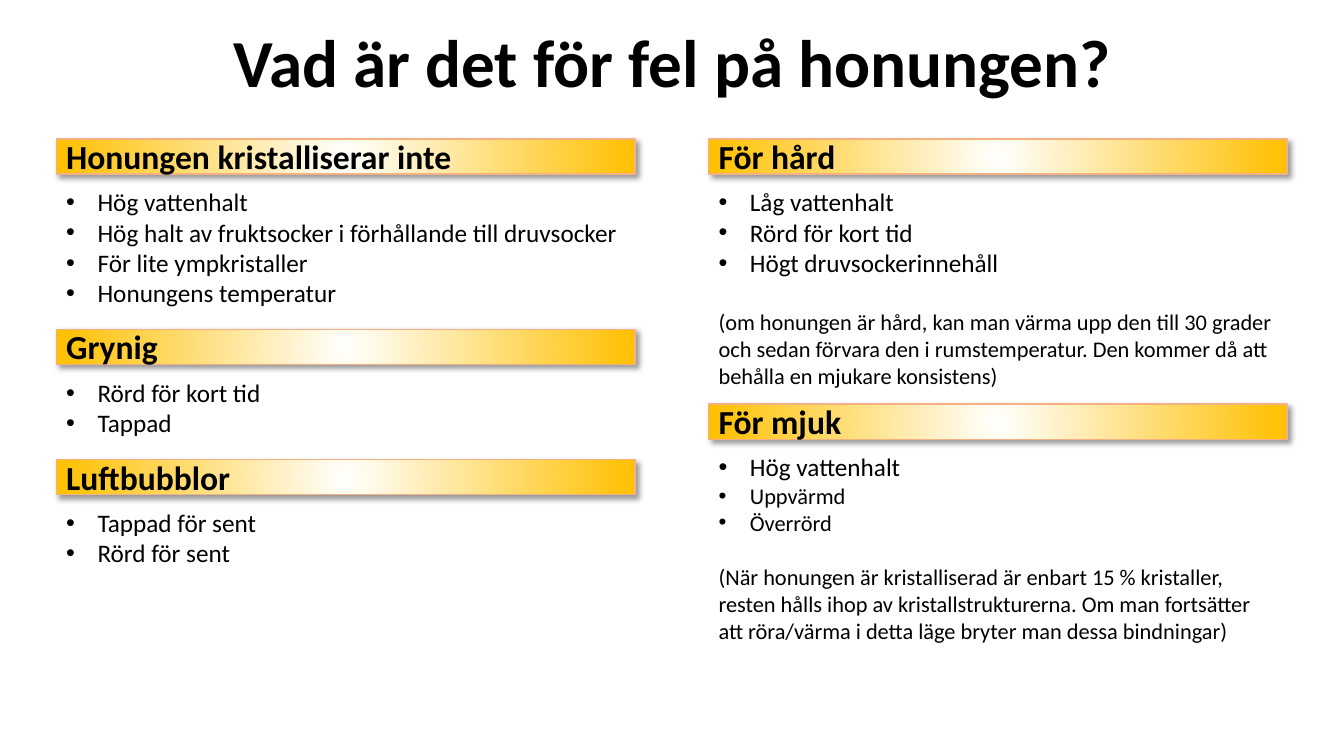
from lxml import etree
from pptx import Presentation
from pptx.dml.color import RGBColor
from pptx.enum.shapes import MSO_SHAPE
from pptx.enum.text import MSO_ANCHOR, MSO_AUTO_SIZE, PP_ALIGN
from pptx.oxml.ns import qn
from pptx.util import Cm, Pt

RECTANGLE = MSO_SHAPE.RECTANGLE
MIDDLE = MSO_ANCHOR.MIDDLE
GROW = MSO_AUTO_SIZE.SHAPE_TO_FIT_TEXT
CENTER = PP_ALIGN.CENTER

BLACK = RGBColor(0x00, 0x00, 0x00)
WHITE = RGBColor(0xFF, 0xFF, 0xFF)
HONEY = RGBColor(0xFF, 0xC0, 0x00)
PEACH = RGBColor(0xF4, 0xB1, 0x83)

LEFT_COLUMN, RIGHT_COLUMN = 1.42, 17.86
COLUMN_WIDTH = 14.58
HEADING_WIDTH, HEADING_HEIGHT = 10.64, 1.27
BAR_OFFSET, BAR_HEIGHT = 0.2, 0.89
BODY_OFFSET = 1.28
BULLET_INDENT = Cm(0.79)

TITLE = {"size": Pt(48), "bold": True}
HEADING = {"size": Pt(24), "bold": True}
BODY = {"size": Pt(18)}
SMALL = {"size": Pt(16)}

# left, top, body height, heading, bullets with format, note, space before note
SECTIONS = [
    (LEFT_COLUMN, 3.3, 3.33, "Honungen kristalliserar inte",
     [("Hög vattenhalt", BODY),
      ("Hög halt av fruktsocker i förhållande till druvsocker", BODY),
      ("För lite ympkristaller", BODY),
      ("Honungens temperatur", BODY)], None, 0),
    (RIGHT_COLUMN, 3.3, 5.38, "För hård",
     [("Låg vattenhalt", BODY),
      ("Rörd för kort tid", BODY),
      ("Högt druvsockerinnehåll", BODY)],
     "(om honungen är hård, kan man värma upp den till 30 grader och sedan "
     "förvara den i rumstemperatur. Den kommer då att behålla en mjukare "
     "konsistens)", 22),
    (RIGHT_COLUMN, 9.98, 5.13, "För mjuk",
     [("Hög vattenhalt", BODY),
      ("Uppvärmd", SMALL),
      ("Överrörd", SMALL)],
     "(När honungen är kristalliserad är enbart 15 % kristaller, resten hålls "
     "ihop av kristallstrukturerna. Om man fortsätter att röra/värma i detta "
     "läge bryter man dessa bindningar)", 19.5),
    (LEFT_COLUMN, 8.1, 1.8, "Grynig",
     [("Rörd för kort tid", BODY), ("Tappad", BODY)], None, 0),
    (LEFT_COLUMN, 11.38, 1.8, "Luftbubblor",
     [("Tappad för sent", BODY), ("Rörd för sent", BODY)], None, 0),
]


def add_element(parent, tag, **attributes):
    return etree.SubElement(parent, qn(tag), attributes)


class HoneySlide:
    base_format = {"name": "Calibri", "bold": False}

    def __init__(self, slide):
        self.slide = slide

    def set_text(self, paragraph, text, text_format):
        paragraph.text = text
        for attribute, value in {**self.base_format, **text_format}.items():
            setattr(paragraph.font, attribute, value)
        paragraph.font.color.rgb = BLACK

    def text_frame(self, shapes, left, top, width, height):
        box = shapes.add_textbox(Cm(left), Cm(top), Cm(width), Cm(height))
        box.text_frame.word_wrap = True
        return box.text_frame

    def title(self, text):
        frame = self.text_frame(self.slide.shapes, 2.34, 0.56, 29.21, 2.18)
        frame.vertical_anchor = MIDDLE
        heading = frame.paragraphs[0]
        heading.alignment = CENTER
        heading.line_spacing = 0.9
        self.set_text(heading, text, TITLE)

    def bar(self, shapes, left, top):
        """Add a band with a radial honey gradient and a soft shadow."""
        band = shapes.add_shape(RECTANGLE, Cm(left), Cm(top),
                                Cm(COLUMN_WIDTH), Cm(BAR_HEIGHT))
        band.fill.gradient()
        for stop, position, color in zip(band.fill.gradient_stops, (0, 1), (WHITE, HONEY)):
            stop.position = position
            stop.color.rgb = color
        band.line.color.rgb = PEACH
        band.line.width = Pt(1)
        band.shadow.inherit = False

        properties = band.element.spPr
        gradient = properties.find(qn("a:gradFill"))
        gradient.remove(gradient.find(qn("a:lin")))
        radial = add_element(gradient, "a:path", path="circle")
        add_element(radial, "a:fillToRect", l="50000", t="50000", r="50000", b="50000")
        shadow = add_element(properties.find(qn("a:effectLst")), "a:outerShdw",
                             blurRad=str(Pt(4)), dist=str(Pt(3)), dir="2700000",
                             algn="tl", rotWithShape="0")
        shade = add_element(shadow, "a:srgbClr", val=str(BLACK))
        add_element(shade, "a:alpha", val="40000")

    def heading(self, shapes, left, top, text):
        frame = self.text_frame(shapes, left, top, HEADING_WIDTH, HEADING_HEIGHT)
        frame.auto_size = GROW
        self.set_text(frame.paragraphs[0], text, HEADING)

    def body(self, shapes, left, top, height, bullets, note, note_gap):
        frame = self.text_frame(shapes, left, top, COLUMN_WIDTH, height)
        frame.auto_size = GROW
        for index, (text, text_format) in enumerate(bullets):
            item = frame.add_paragraph() if index else frame.paragraphs[0]
            properties = item._p.get_or_add_pPr()
            properties.set("marL", str(BULLET_INDENT))
            properties.set("indent", str(-BULLET_INDENT))
            add_element(properties, "a:buFont", typeface="Arial")
            add_element(properties, "a:buChar", char="•")
            self.set_text(item, text, text_format)
        if note:
            remark = frame.add_paragraph()
            remark.space_before = Pt(note_gap)
            self.set_text(remark, note, SMALL)

    def section(self, left, top, body_height, heading, bullets, note, note_gap):
        shapes = self.slide.shapes.add_group_shape().shapes
        self.bar(shapes, left, top + BAR_OFFSET)
        self.heading(shapes, left, top, heading)
        self.body(shapes, left, top + BODY_OFFSET, body_height, bullets, note, note_gap)


def main():
    presentation = Presentation()
    presentation.slide_width = Cm(33.87)
    presentation.slide_height = Cm(19.05)
    honey = HoneySlide(presentation.slides.add_slide(presentation.slide_layouts[6]))
    honey.title("Vad är det för fel på honungen?")
    for section in SECTIONS:
        honey.section(*section)
    presentation.save("out.pptx")


if __name__ == "__main__":
    main()
